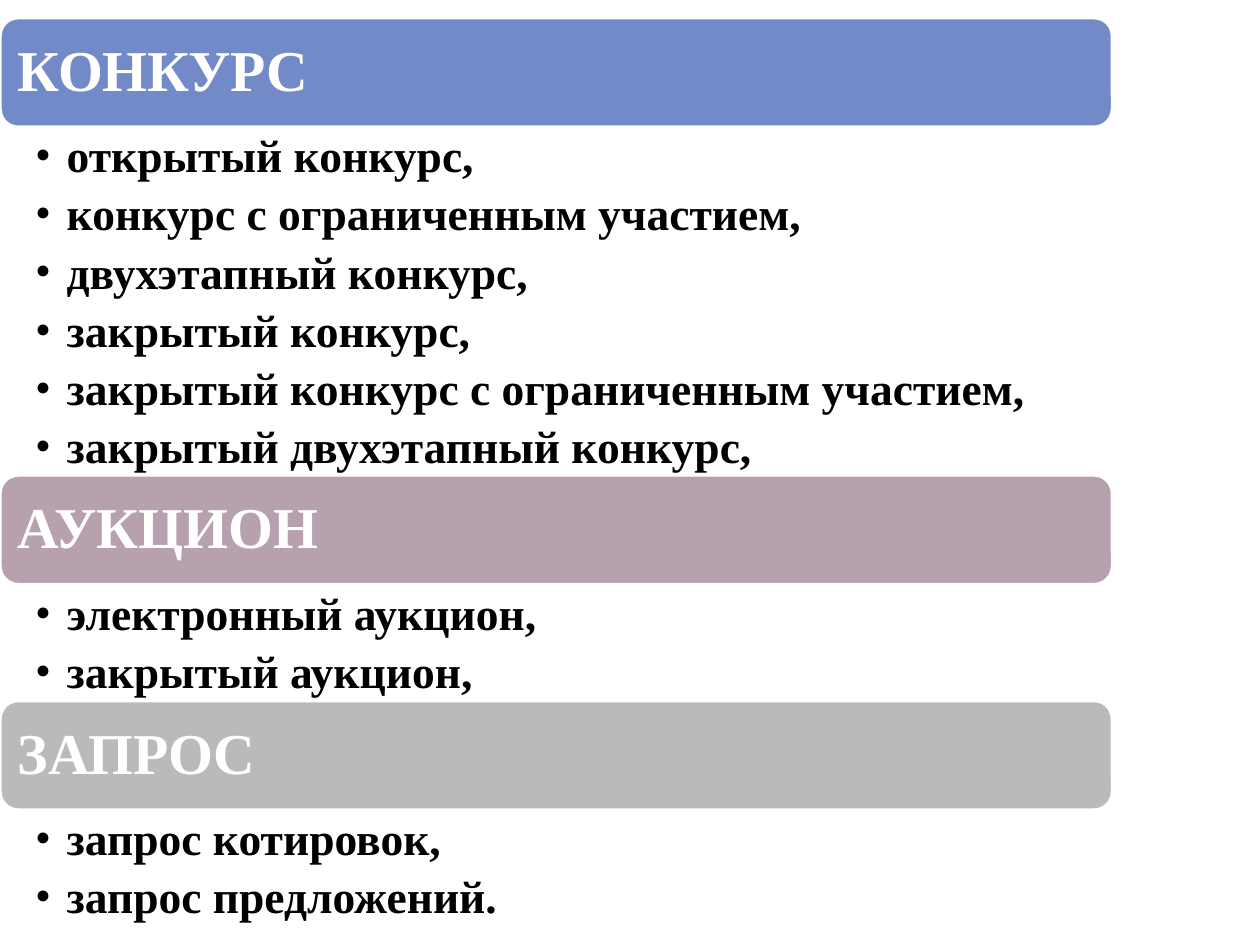
import pptx
import pptx.dml.color
import pptx.enum.shapes
import pptx.enum.text
import pptx.oxml.ns
import pptx.util
from lxml import etree
from pptx.util import Inches

SECTIONS = [
    ("КОНКУРС", "738AC8", [
        "открытый конкурс,",
        "конкурс с ограниченным участием,",
        "двухэтапный конкурс,",
        "закрытый конкурс,",
        "закрытый конкурс с ограниченным участием,",
        "закрытый двухэтапный конкурс,",
    ]),
    ("АУКЦИОН", "B7A1AE", ["электронный аукцион,", "закрытый аукцион,"]),
    ("ЗАПРОС", "BABABA", ["запрос котировок,", "запрос предложений."]),
]
TOP, WIDTH, BAR_HEIGHT, ROW_HEIGHT = 0.14, 8.83, 0.87, 0.46


def rgb(value):
    return pptx.dml.color.RGBColor.from_string(value)


def write(paragraph, text, size=26, color="000000", font="Times New Roman", after=0, bullet=False):
    paragraph.alignment = pptx.enum.text.PP_ALIGN.LEFT
    paragraph.line_spacing = 0.9
    paragraph.space_after = pptx.util.Pt(after)
    run = paragraph.add_run()
    run.text = text
    for style in (run.font, paragraph.font):
        style.name = font
        style.size = pptx.util.Pt(size)
        style.bold = True
        style.color.rgb = rgb(color)
    if bullet:
        properties = paragraph._p.get_or_add_pPr()
        properties.set("marL", str(Inches(0.25)))
        properties.set("indent", str(Inches(-0.25)))
        defaults = properties.find(pptx.oxml.ns.qn("a:defRPr"))
        for tag, name, value in (("a:buFont", "typeface", font), ("a:buChar", "char", "•")):
            mark = etree.Element(pptx.oxml.ns.qn(tag))
            mark.set(name, value)
            defaults.addprevious(mark)


class SlideBuilder:
    """Holds the current slide and draws headings and lists in one style."""

    def __init__(self, slide, white="FFFFFF"):
        self.slide = slide
        self.white = white

    def frame(self, shape, left, top, right, bottom):
        frame = shape.text_frame
        frame.word_wrap = True
        frame.margin_left, frame.margin_top = Inches(left), Inches(top)
        frame.margin_right, frame.margin_bottom = Inches(right), Inches(bottom)
        return frame

    def heading(self, text, top, fill):
        bar = self.slide.shapes.add_shape(
            pptx.enum.shapes.MSO_SHAPE.ROUNDED_RECTANGLE,
            0, Inches(top), Inches(WIDTH), Inches(BAR_HEIGHT))
        bar.shadow.inherit = False
        bar.fill.solid()
        bar.fill.fore_color.rgb = rgb(fill)
        bar.line.color.rgb = rgb(self.white)
        bar.line.width = pptx.util.Pt(2)
        frame = self.frame(bar, 0.1, 0.1, 0.1, 0.1)
        frame.vertical_anchor = pptx.enum.text.MSO_ANCHOR.MIDDLE
        write(frame.paragraphs[0], text, size=33, color=self.white)

    def bullets(self, items, top, height):
        box = self.slide.shapes.add_textbox(0, Inches(top), Inches(WIDTH), Inches(height))
        frame = self.frame(box, 0.28, 0.05, 0.26, 0.05)
        for index, item in enumerate(items):
            paragraph = frame.add_paragraph() if index else frame.paragraphs[0]
            write(paragraph, item, after=5.2, bullet=True)


def main():
    presentation = pptx.Presentation()
    presentation.slide_width, presentation.slide_height = Inches(10), Inches(7.5)
    builder = SlideBuilder(presentation.slides.add_slide(presentation.slide_layouts[6]))
    top = TOP
    for title, fill, items in SECTIONS:
        builder.heading(title, top, fill)
        top += BAR_HEIGHT
        list_height = ROW_HEIGHT * len(items)
        builder.bullets(items, top, list_height)
        top += list_height
    presentation.save("out.pptx")


if __name__ == "__main__":
    main()
